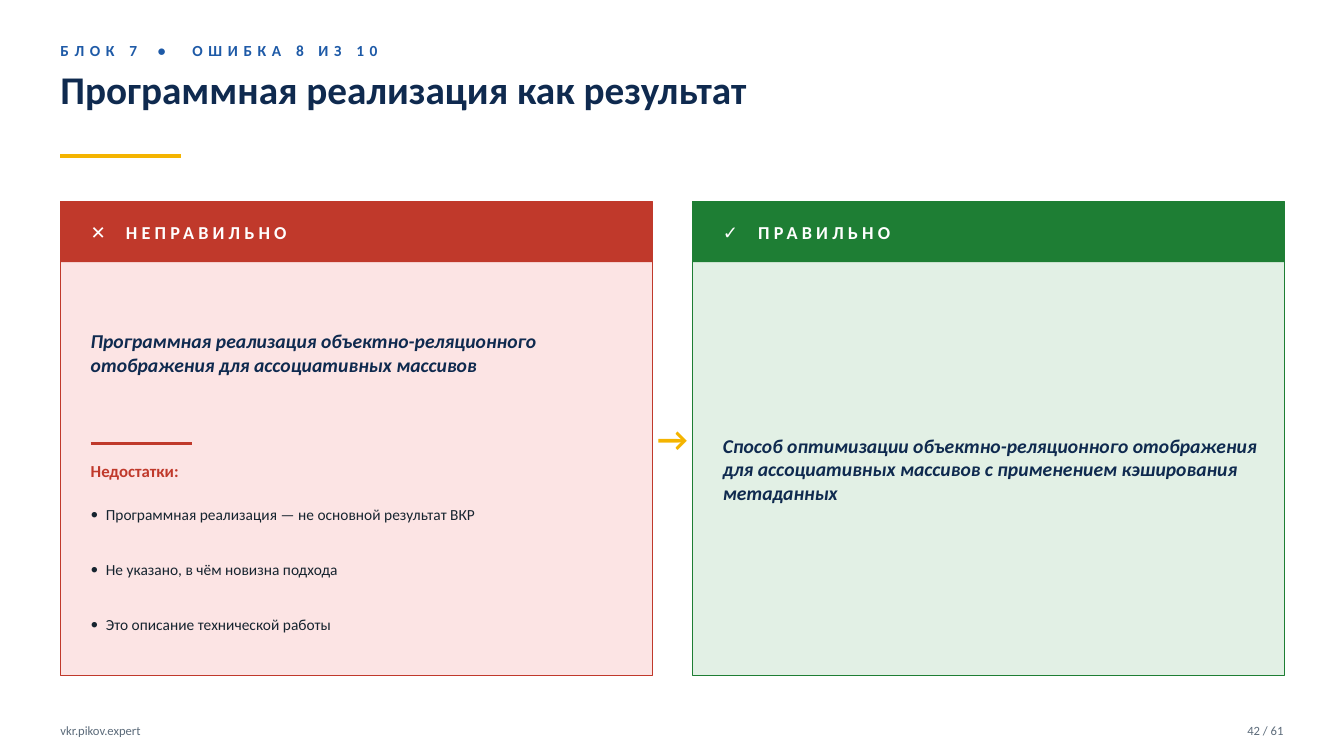
from pptx import Presentation
from pptx.dml.color import RGBColor
from pptx.enum.shapes import MSO_CONNECTOR, MSO_SHAPE
from pptx.enum.text import MSO_ANCHOR, MSO_AUTO_SIZE, PP_ALIGN
from pptx.oxml.ns import qn
from pptx.util import Inches, Pt

NAVY = RGBColor(0x0F, 0x2A, 0x4F)
BLUE = RGBColor(0x1E, 0x5A, 0xA7)
GOLD = RGBColor(0xF4, 0xB4, 0x00)
RED = RGBColor(0xC0, 0x39, 0x2B)
PINK = RGBColor(0xFC, 0xE4, 0xE4)
GREEN = RGBColor(0x1E, 0x7E, 0x34)
MINT = RGBColor(0xE2, 0xF0, 0xE5)
INK = RGBColor(0x16, 0x24, 0x2F)
GRAY = RGBColor(0x5C, 0x6B, 0x7A)
WHITE = RGBColor(0xFF, 0xFF, 0xFF)

# Each part of the kicker with its letter spacing in points
KICKER = [("БЛОК 7", 4), (" • ", 8.3), ("ОШИБКА 8 ИЗ 10", 4)]
TITLE = "Программная реализация как результат"
CARDS = [
    {"heading": "✕\tНЕПРАВИЛЬНО", "accent": RED, "tint": PINK, "topic_height": 1.4,
     "topic": "Программная реализация объектно-реляционного отображения "
              "для ассоциативных массивов",
     "flaws": ["Программная реализация — не основной результат ВКР",
               "Не указано, в чём новизна подхода",
               "Это описание технической работы"]},
    {"heading": "✓\tПРАВИЛЬНО", "accent": GREEN, "tint": MINT, "topic_height": 3.7,
     "topic": "Способ оптимизации объектно-реляционного отображения для "
              "ассоциативных массивов с применением кэширования метаданных",
     "flaws": []},
]
FLAWS_LABEL = "Недостатки:"
SITE = "vkr.pikov.expert"
PAGE = "42 / 61"

FONT = "Calibri"
MARGIN = 0.6
CONTENT_WIDTH = 12.13
CARD_TOP, CARD_WIDTH, CARD_HEIGHT, CARD_GAP = 2, 5.87, 4.7, 0.4
HEADER_HEIGHT, PADDING, TEXT_WIDTH = 0.6, 0.3, 5.37


def prepare_frame(frame, anchor=MSO_ANCHOR.MIDDLE):
    frame.word_wrap = True
    frame.auto_size = MSO_AUTO_SIZE.NONE
    frame.vertical_anchor = anchor
    frame.margin_left = frame.margin_right = frame.margin_top = frame.margin_bottom = 0
    return frame


def add_frame(slide, left, top, width, height):
    box = slide.shapes.add_textbox(Inches(left), Inches(top), Inches(width), Inches(height))
    return prepare_frame(box.text_frame)


def add_run(paragraph, text, size, color, bold=False, italic=False, spacing=0):
    run = paragraph.add_run()
    run.text = text
    font = run.font
    font.name, font.size, font.bold, font.italic = FONT, Pt(size), bold, italic
    font.color.rgb = color
    if spacing:
        font._element.set("spc", str(round(spacing * 100)))


def add_rule(slide, left, top, length, color, weight):
    rule = slide.shapes.add_connector(MSO_CONNECTOR.STRAIGHT, Inches(left), Inches(top),
                                      Inches(left + length), Inches(top))
    rule.line.color.rgb = color
    rule.line.width = Pt(weight)
    properties = rule._element.spPr
    properties.append(properties.makeelement(qn("a:effectLst"), {}))


def add_panel(slide, left, height, fill, border=None):
    panel = slide.shapes.add_shape(MSO_SHAPE.RECTANGLE, Inches(left), Inches(CARD_TOP),
                                   Inches(CARD_WIDTH), Inches(height))
    panel.shadow.inherit = False
    panel.fill.solid()
    panel.fill.fore_color.rgb = fill
    if border is None:
        panel.line.fill.background()
    else:
        panel.line.color.rgb = border
        panel.line.width = Pt(1)


def set_tab(paragraph, position):
    properties = paragraph._p.get_or_add_pPr()
    tabs = properties.makeelement(qn("a:tabLst"), {})
    tabs.append(tabs.makeelement(qn("a:tab"), {"pos": str(Inches(position)), "algn": "l"}))
    properties.append(tabs)


def set_bullet(paragraph, indent):
    properties = paragraph._p.get_or_add_pPr()
    properties.set("marL", str(Inches(indent)))
    properties.set("indent", str(-Inches(indent)))
    properties.append(properties.makeelement(qn("a:buFont"), {"typeface": FONT}))
    properties.append(properties.makeelement(qn("a:buChar"), {"char": "•"}))


def add_flaws(slide, left, flaws, accent):
    add_rule(slide, left, 4.4, 1, accent, 2)
    label = add_frame(slide, left, 4.5, TEXT_WIDTH, 0.35).paragraphs[0]
    add_run(label, FLAWS_LABEL, 12, accent, bold=True)
    frame = add_frame(slide, left, 4.85, TEXT_WIDTH, 1.6)
    for index, flaw in enumerate(flaws):
        item = frame.add_paragraph() if index else frame.paragraphs[0]
        if index:
            item.space_before = Pt(26.2)
        set_bullet(item, 0.15)
        add_run(item, flaw, 11, INK)


def add_card(slide, left, card):
    add_panel(slide, left, CARD_HEIGHT, card["tint"], card["accent"])
    add_panel(slide, left, HEADER_HEIGHT, card["accent"])
    text_left = left + PADDING
    heading = add_frame(slide, text_left, CARD_TOP, TEXT_WIDTH, HEADER_HEIGHT).paragraphs[0]
    set_tab(heading, 0.35)
    add_run(heading, card["heading"], 13, WHITE, bold=True, spacing=3)
    topic = add_frame(slide, text_left, CARD_TOP + 0.8, TEXT_WIDTH, card["topic_height"])
    add_run(topic.paragraphs[0], card["topic"], 14, NAVY, bold=True, italic=True)
    if card["flaws"]:
        add_flaws(slide, text_left, card["flaws"], card["accent"])


def add_arrow(slide):
    arrow = add_frame(slide, MARGIN + CARD_WIDTH, 4, CARD_GAP, 0.7).paragraphs[0]
    arrow.alignment = PP_ALIGN.CENTER
    add_run(arrow, "→", 24, GOLD, bold=True)


def main():
    deck = Presentation()
    deck.slide_width, deck.slide_height = Inches(13.33), Inches(7.5)
    slide = deck.slides.add_slide(deck.slide_layouts[5])

    title = slide.shapes.title
    title.left, title.top = Inches(MARGIN), Inches(0.65)
    title.width, title.height = Inches(CONTENT_WIDTH), Inches(0.85)
    heading = prepare_frame(title.text_frame, MSO_ANCHOR.TOP).paragraphs[0]
    heading.alignment = PP_ALIGN.LEFT
    add_run(heading, TITLE, 28, NAVY, bold=True)

    kicker = add_frame(slide, MARGIN, 0.35, 6, 0.3).paragraphs[0]
    for part, spacing in KICKER:
        add_run(kicker, part, 11, BLUE, bold=True, spacing=spacing)
    add_rule(slide, MARGIN, 1.55, 1.2, GOLD, 3)

    for index, card in enumerate(CARDS):
        add_card(slide, MARGIN + index * (CARD_WIDTH + CARD_GAP), card)
    add_arrow(slide)

    site = add_frame(slide, MARGIN, 7.1, 4, 0.3).paragraphs[0]
    add_run(site, SITE, 9, GRAY)
    page = add_frame(slide, MARGIN + CONTENT_WIDTH - 1, 7.1, 1, 0.3).paragraphs[0]
    page.alignment = PP_ALIGN.RIGHT
    add_run(page, PAGE, 9, GRAY)

    deck.save("out.pptx")


if __name__ == "__main__":
    main()
